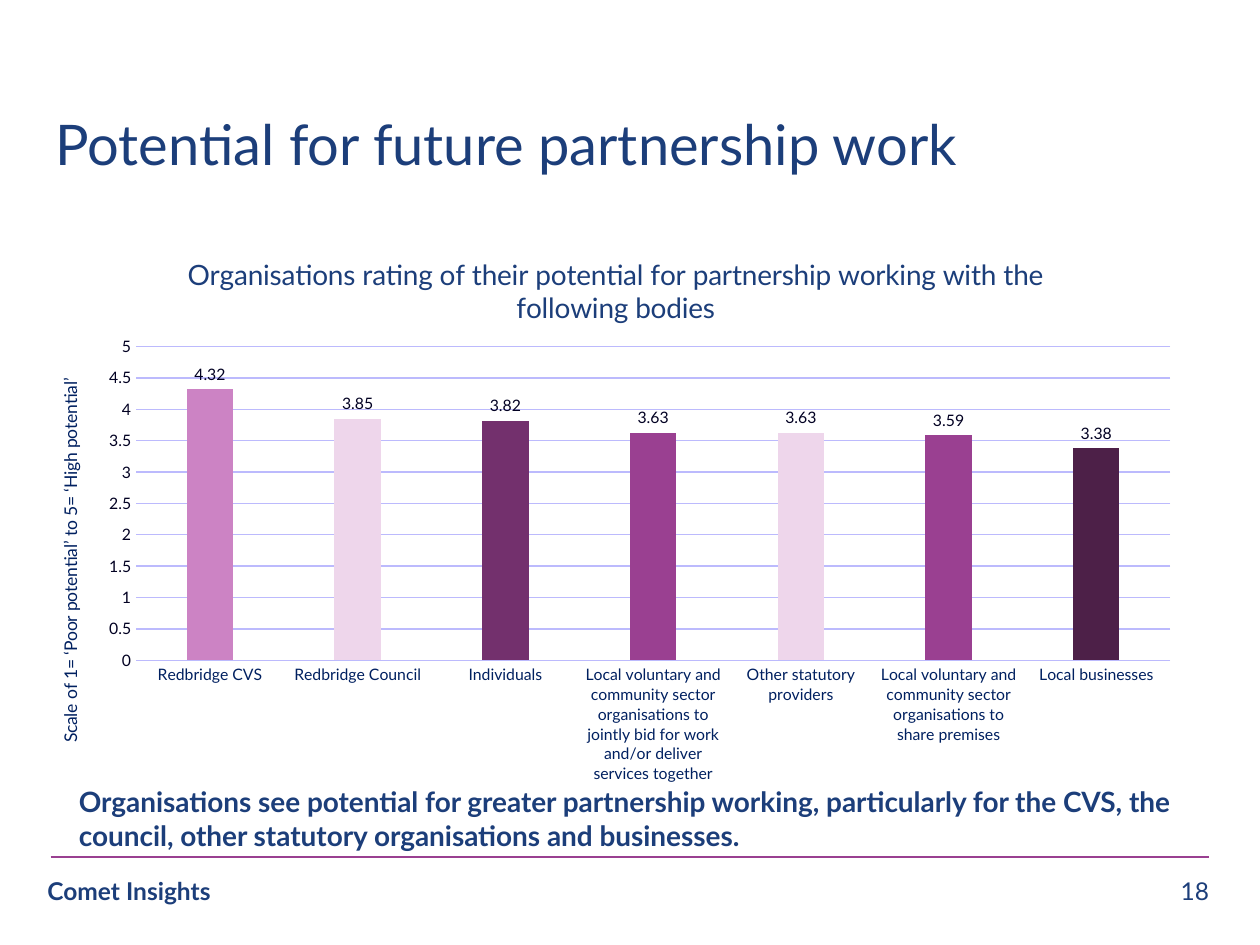
from lxml.etree import SubElement
from pptx import Presentation
from pptx.chart.data import CategoryChartData
from pptx.dml.color import RGBColor
from pptx.enum.chart import XL_CHART_TYPE as CT, XL_LABEL_POSITION as LP, XL_TICK_MARK as TM
from pptx.enum.shapes import MSO_CONNECTOR as CONN
from pptx.enum.text import MSO_ANCHOR as ANCHOR, PP_ALIGN as ALIGN
from pptx.oxml import parse_xml
from pptx.oxml.ns import nsdecls, qn
from pptx.util import Pt

BLUE = RGBColor(0x1C, 0x3E, 0x7A)
NAVY = RGBColor(0x00, 0x20, 0x60)
INK = RGBColor(0x02, 0x01, 0x22)
GRID = RGBColor(0xBC, 0xBA, 0xFD)
PURPLE = RGBColor(0x9A, 0x40, 0x91)
PALE = RGBColor(0xEE, 0xD6, 0xEB)
PINK = RGBColor(0xCC, 0x83, 0xC4)
PLUM = RGBColor(0x73, 0x30, 0x6D)
DARK = RGBColor(0x4D, 0x20, 0x48)

FONT = "Lato"
RATINGS = [
    ("Redbridge CVS", 4.32, PINK),
    ("Redbridge Council", 3.85, PALE),
    ("Individuals", 3.82, PLUM),
    ("Local voluntary and community sector organisations to jointly bid "
     "for work and/or deliver services together", 3.63, PURPLE),
    ("Other statutory providers", 3.63, PALE),
    ("Local voluntary and community sector organisations to share premises",
     3.59, PURPLE),
    ("Local businesses", 3.38, DARK),
]


def set_font(font, size, color=BLUE, bold=False):
    values = {"name": FONT, "size": Pt(size), "bold": bold}
    for name, value in values.items():
        setattr(font, name, value)
    font.color.rgb = color


def write(tf, text, size, color=BLUE, bold=False, align=ALIGN.LEFT):
    tf.word_wrap = True
    p = tf.paragraphs[0]
    p.alignment = align
    r = p.add_run()
    r.text = text
    set_font(r.font, size, color, bold)


def add_title(slide, text, box):
    sp = slide.shapes.title
    sp.left, sp.top, sp.width, sp.height = map(Pt, box)
    sp.text_frame.vertical_anchor = ANCHOR.MIDDLE
    sp.text_frame.margin_left = Pt(10)
    write(sp.text_frame, text, 32)


def add_text(slide, text, box, size, **style):
    sp = slide.shapes.add_textbox(*map(Pt, box))
    write(sp.text_frame, text, size, **style)


def add_rule(slide, x1, x2, y):
    line = slide.shapes.add_connector(CONN.STRAIGHT, Pt(x1), Pt(y), Pt(x2), Pt(y))
    line.line.color.rgb = PURPLE
    line.line.width = Pt(1)
    SubElement(line._element.spPr, qn("a:effectLst"))


def place(parent, before, inner=False, **box):
    """Fix the position of a chart part, in fractions of the chart area."""
    for old in parent.findall(qn("c:layout")):
        parent.remove(old)
    target = '<c:layoutTarget val="inner"/>' if inner else ""
    modes = "".join(f'<c:{k}Mode val="edge"/>' for k in "xy")
    sizes = "".join(f'<c:{k} val="{v}"/>' for k, v in box.items())
    layout = parse_xml(f'<c:layout {nsdecls("c")}><c:manualLayout>{target}{modes}'
                       f'{sizes}</c:manualLayout></c:layout>')
    parent.find(qn(before)).addprevious(layout)


def format_axes(chart):
    cat, val = chart.category_axis, chart.value_axis
    for axis, color in ((cat, NAVY), (val, INK)):
        axis.major_tick_mark = axis.minor_tick_mark = TM.NONE
        set_font(axis.tick_labels.font, 9, color)
    scale = {"minimum_scale": 0, "maximum_scale": 5, "major_unit": 0.5}
    for name, value in scale.items():
        setattr(val, name, value)
    val.format.line.fill.background()
    for line in (cat.format.line, val.major_gridlines.format.line):
        line.color.rgb = GRID
        line.width = Pt(0.75)
    write(val.axis_title.text_frame,
          "Scale of 1= ‘Poor potential’ to 5= ‘High potential’",
          10, NAVY, align=ALIGN.CENTER)


def format_columns(plot):
    plot.gap_width, plot.overlap = 219, -27
    plot.vary_by_categories = False
    series = plot.series[0]
    series.format.fill.solid()
    series.format.fill.fore_color.rgb = PALE
    for i, (_, _, color) in enumerate(RATINGS):
        if color != PALE:
            fill = series.points[i].format.fill
            fill.solid()
            fill.fore_color.rgb = color
    labels = series.data_labels
    labels.show_value = True
    labels.position = LP.OUTSIDE_END
    set_font(labels.font, 9, INK)


def add_rating_chart(slide, box):
    data = CategoryChartData()
    data.categories = [name for name, _, _ in RATINGS]
    data.add_series("Series 1", [value for _, value, _ in RATINGS])
    chart = slide.shapes.add_chart(CT.COLUMN_CLUSTERED, *map(Pt, box), data).chart
    chart.has_legend = False
    set_font(chart.font, 10, INK)
    write(chart.chart_title.text_frame,
          "Organisations rating of their potential for partnership working "
          "with the following bodies", 16, align=ALIGN.CENTER)
    format_axes(chart)
    format_columns(chart.plots[0])
    place(chart.chart_title._element, "c:overlay", x=0.13, y=0.04)
    place(chart.value_axis.axis_title._element, "c:overlay", x=0.02, y=0.26)
    place(chart._chartSpace.chart.plotArea, "c:barChart", inner=True,
          x=0.09, y=0.21, w=0.89, h=0.55)


def main():
    prs = Presentation()
    prs.slide_width, prs.slide_height = Pt(720), Pt(540)
    slide = prs.slides.add_slide(prs.slide_layouts[5])
    add_text(slide, "Comet Insights", (20, 497, 169, 24), 14, bold=True)
    add_rule(slide, 29, 691, 489.6)
    add_text(slide, "18", (547, 497, 151, 19), 14, align=ALIGN.RIGHT)
    add_rating_chart(slide, (18, 129.6, 664, 326))
    add_title(slide, "Potential for future partnership work", (21.6, 57, 676, 50))
    add_text(slide, "Organisations see potential for greater partnership working, "
             "particularly for the CVS, the council, other statutory "
             "organisations and businesses.", (38, 445, 676, 46), 16, bold=True)
    prs.save("out.pptx")


if __name__ == "__main__":
    main()
